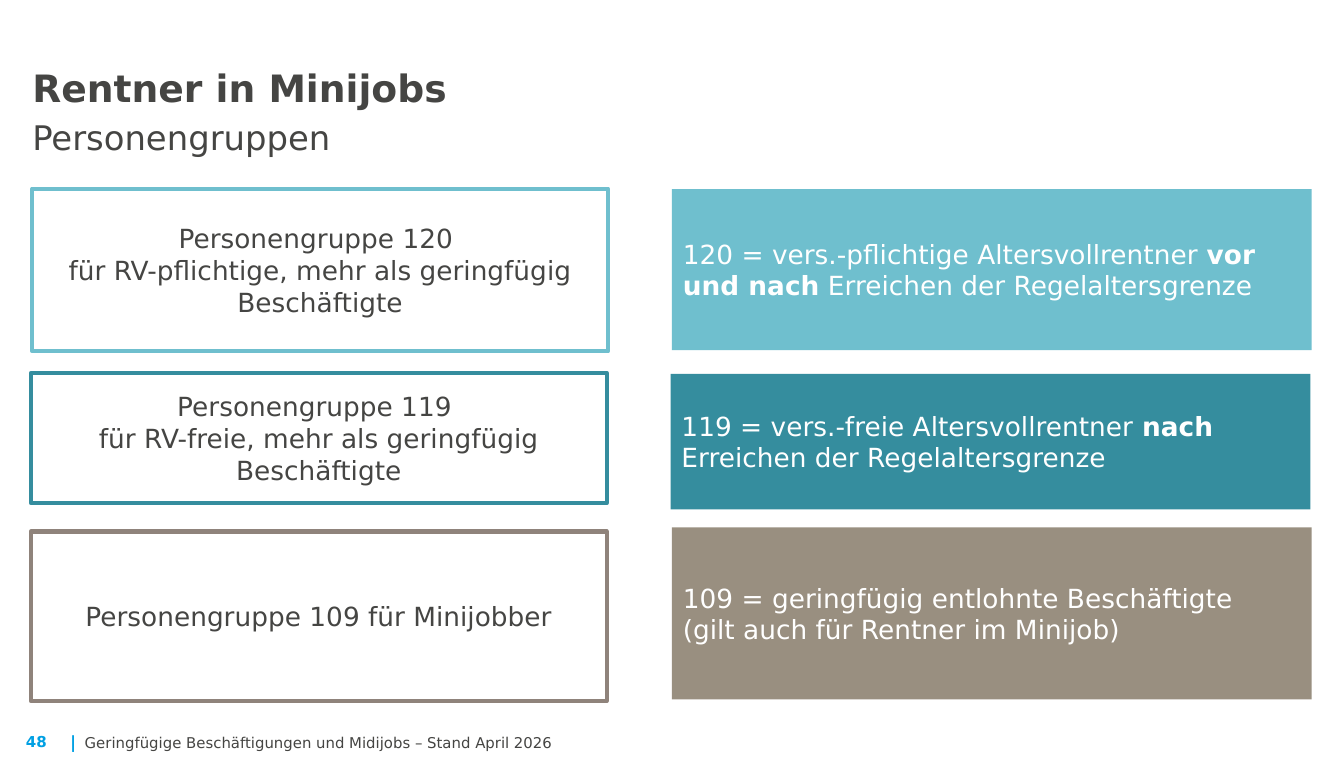
from pptx import Presentation
from pptx.dml.color import RGBColor as Rgb
from pptx.enum.shapes import MSO_SHAPE as Preset
from pptx.enum.text import MSO_ANCHOR as Anchor, MSO_AUTO_SIZE as AutoSize, PP_ALIGN as Align
from pptx.util import Cm, Inches, Pt

WIDTH, HEIGHT = Cm(25.2), Pt(405)
FONT = "DejaVu Sans"
COLORS = {
    "text": "454543",
    "accent": "00A0E3",
    "white": "FFFFFF",
    "aqua": "6FBFCE",
    "teal": "358D9E",
    "taupe_line": "8F837B",
    "taupe_fill": "998F80",
}
GROUP_WIDTH, MEANING_WIDTH = 42.84, 47.6
GROUPS = [
    ((2.4, 24.77, 21.35), "aqua",
     ["Personengruppe 120 \nfür RV-pflichtige, mehr als geringfügig Beschäftigte"]),
    ((2.3, 48.95, 17.08), "teal",
     ["Personengruppe 119 ", "für RV-freie, mehr als geringfügig Beschäftigte"]),
    ((2.3, 69.77, 22.24), "taupe_line", ["Personengruppe 109 für Minijobber"]),
]
MEANINGS = [
    ((50, 24.82, 21.15), "aqua",
     [("120 = vers.-pflichtige Altersvollrentner ", False), ("vor und nach", True),
      (" Erreichen der Regelaltersgrenze", False)]),
    ((49.9, 49.07, 17.79), "teal",
     [("119 = vers.-freie Altersvollrentner ", False), ("nach", True),
      (" Erreichen der Regelaltersgrenze", False)]),
    ((50, 69.22, 22.58), "taupe_fill",
     [("109 = geringfügig entlohnte Beschäftigte \n(gilt auch für Rentner im Minijob)", False)]),
]


def color(name):
    """Return the named palette colour."""
    return Rgb.from_string(COLORS[name])


def area(left, top, width, height):
    """Turn percentages of the slide into lengths."""
    return [int(share * side / 100) for share, side in
            zip((left, top, width, height), (WIDTH, HEIGHT, WIDTH, HEIGHT))]


def apply(target, formats):
    """Set every attribute given in the formats."""
    for attribute, value in formats.items():
        setattr(target, attribute, value)


def set_frame(frame, margins, anchor, wrap=True):
    """Set the margins, anchor and wrapping of a text frame."""
    sides = ("margin_left", "margin_top", "margin_right", "margin_bottom")
    apply(frame, dict(zip(sides, map(Inches, margins))))
    apply(frame, {"vertical_anchor": anchor, "word_wrap": wrap, "auto_size": AutoSize.NONE})


def write(paragraph, pieces, hue, align=Align.LEFT):
    """Write (text, size, bold) pieces, breaking lines at newlines."""
    paragraph.alignment = align
    for words, size, bold in pieces:
        for number, line in enumerate(words.split("\n")):
            if number:
                paragraph.add_line_break()
            if line:
                run = paragraph.add_run()
                run.text = line
                apply(run.font, {"name": FONT, "size": Pt(size), "bold": bold})
                run.font.color.rgb = color(hue)


def add_heading(slide, heading, subheading):
    """Fill the title placeholder with a heading and a subheading."""
    title = slide.shapes.title
    apply(title, dict(zip(("left", "top", "width", "height"), area(2.4, 8, 85.79, 12.63))))
    set_frame(title.text_frame, (0, 0, 0, 0), Anchor.BOTTOM)
    paragraph = title.text_frame.paragraphs[0]
    paragraph.line_spacing = Pt(24.8)
    write(paragraph, [(heading + "\n", 20, True), (subheading, 18, False)], "text")


def add_label(slide, place, piece, hue, margins=(0, 0, 0, 0), anchor=Anchor.BOTTOM, wrap=False):
    """Add a small footer text."""
    frame = slide.shapes.add_textbox(*area(*place)).text_frame
    set_frame(frame, margins, anchor, wrap)
    write(frame.paragraphs[0], [piece], hue)


def add_box(slide, place, width):
    """Add a plain rectangle ready for text."""
    left, top, height = place
    box = slide.shapes.add_shape(Preset.RECTANGLE, *area(left, top, width, height))
    box.shadow.inherit = False
    set_frame(box.text_frame, (0.08, 0.04, 0.08, 0.04), Anchor.MIDDLE)
    return box


def add_group(slide, place, hue, lines):
    """Add an outlined box naming a group of persons."""
    box = add_box(slide, place, GROUP_WIDTH)
    box.fill.background()
    box.line.color.rgb = color(hue)
    box.line.width = Pt(2.25)
    frame = box.text_frame
    for number, line in enumerate(lines):
        paragraph = frame.add_paragraph() if number else frame.paragraphs[0]
        write(paragraph, [(line, 14, False)], "text", Align.CENTER)


def add_meaning(slide, place, hue, phrases):
    """Add a filled box explaining a group number."""
    box = add_box(slide, place, MEANING_WIDTH)
    box.fill.solid()
    box.fill.fore_color.rgb = color(hue)
    box.line.fill.background()
    pieces = [(words, 14, bold) for words, bold in phrases]
    write(box.text_frame.paragraphs[0], pieces, "white")


def main():
    """Build and save the slide."""
    deck = Presentation()
    deck.slide_width = WIDTH
    deck.slide_height = HEIGHT
    slide = deck.slides.add_slide(deck.slide_layouts[5])
    add_heading(slide, "Rentner in Minijobs", "Personengruppen")
    for group, meaning in zip(GROUPS, MEANINGS):
        add_group(slide, *group)
        add_meaning(slide, *meaning)
    add_label(slide, (0.93, 95.2, 3.63, 4.27), ("48", 8, True), "accent",
              (0.1, 0.05, 0.1, 0.05), Anchor.TOP)
    add_label(slide, (5.22, 95.95, 0.6, 2.67), ("|", 8.9, True), "accent")
    add_label(slide, (6.3, 95.95, 91.33, 2.67),
              ("Geringfügige Beschäftigungen und Midijobs – Stand April 2026", 7.9, False),
              "text", wrap=True)
    deck.save("out.pptx")


if __name__ == "__main__":
    main()
